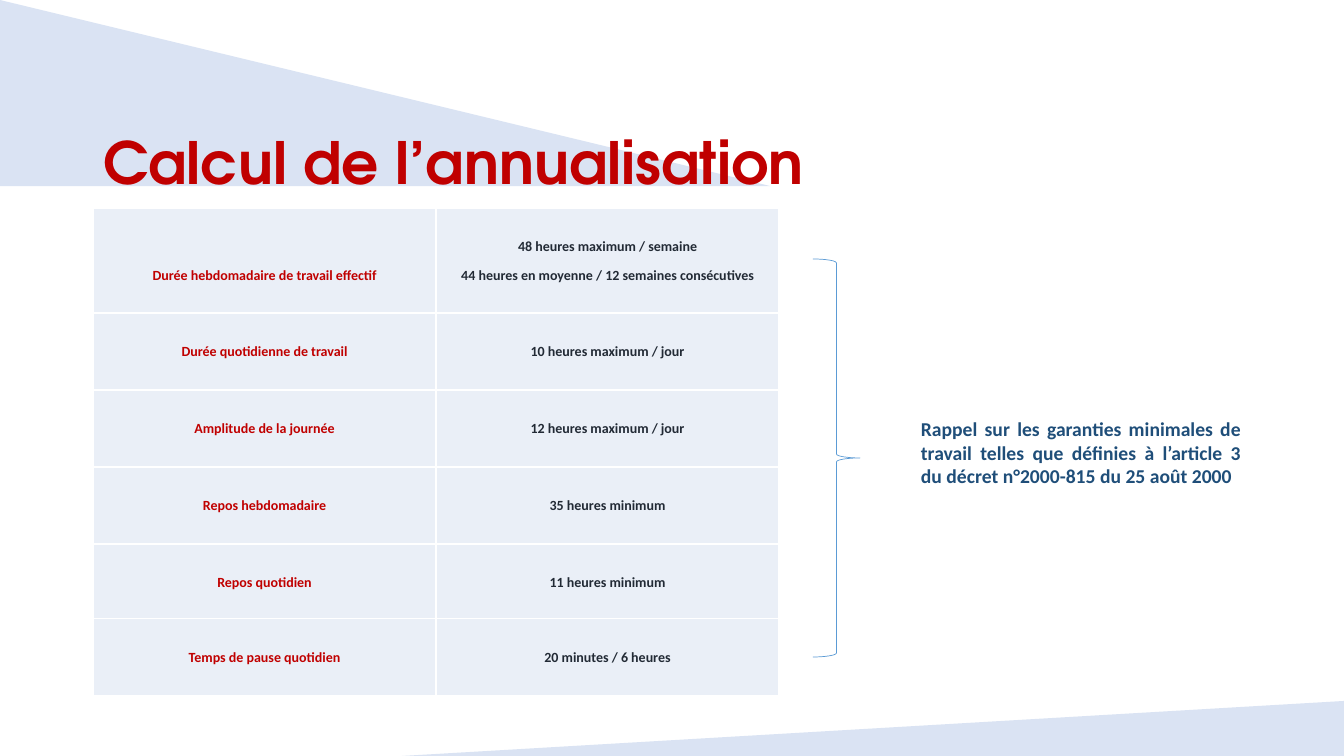
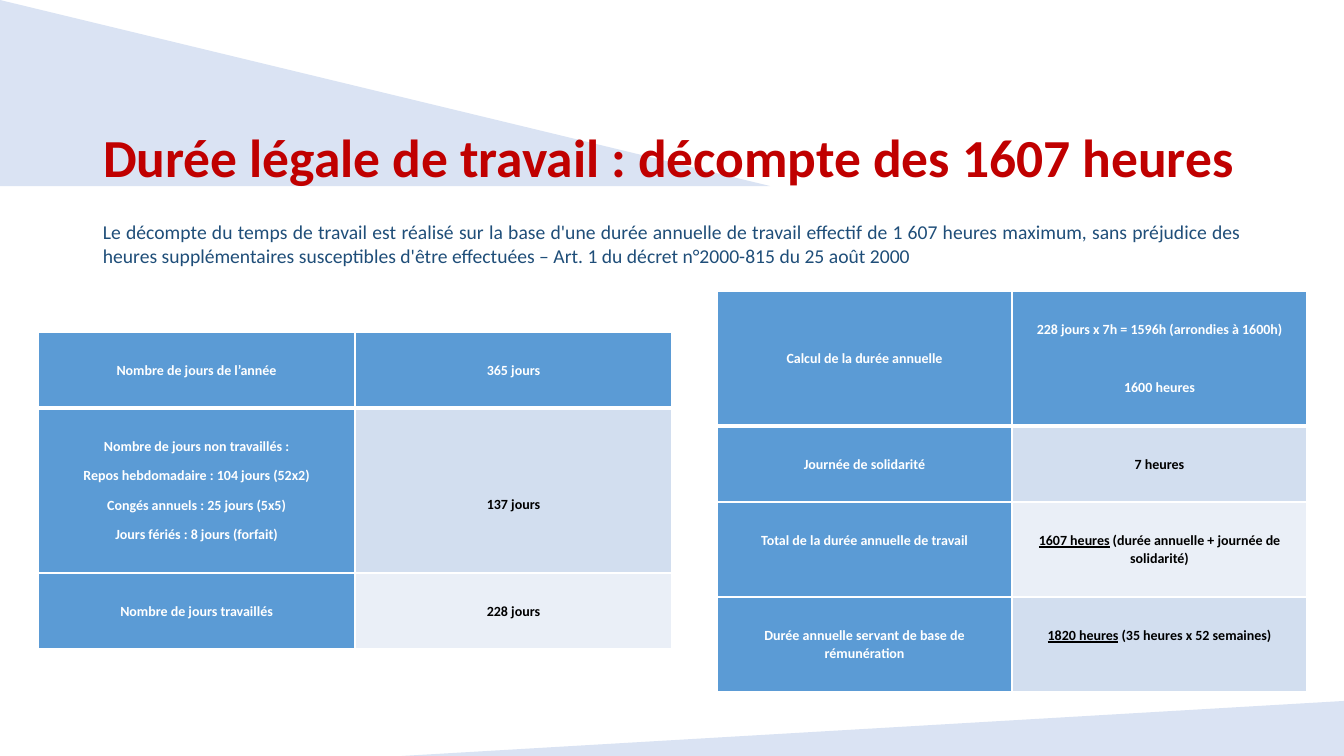
"""Build two slides on the annual working time rules."""
import pptx
import pptx.dml.color
import pptx.enum.shapes
import pptx.enum.text
import pptx.oxml
import pptx.oxml.ns
import pptx.util
from lxml import etree

RGB = pptx.dml.color.RGBColor
Pt = pptx.util.Pt
SHAPE = pptx.enum.shapes.MSO_SHAPE
ALIGN = pptx.enum.text.PP_ALIGN
ANCHOR = pptx.enum.text.MSO_ANCHOR
qn = pptx.oxml.ns.qn

RED = RGB(0xC0, 0x00, 0x00)
NAVY = RGB(0x1F, 0x4E, 0x79)
DARK = RGB(0x22, 0x2A, 0x35)
BLACK = RGB(0x00, 0x00, 0x00)
WHITE = RGB(0xFF, 0xFF, 0xFF)
BAND = RGB(0xDA, 0xE3, 0xF3)
BLUE = RGB(0x5B, 0x9B, 0xD5)
MID = RGB(0xD2, 0xDE, 0xEF)
PALE = RGB(0xEA, 0xEF, 0xF7)

FONT = "Calibri"
TITLE_FONT = "TeX Gyre Adventor"
LINE = 29

BANDS = [((0, 0, 770, 186), False), ((402, 701, 942, 55), True)]

GUARANTEES = [
    ([(2, "Durée hebdomadaire de travail effectif")],
     [(1, "48 heures maximum / semaine"), (0, "44 heures en moyenne / 12 semaines consécutives")]),
    ([(1, "Durée quotidienne de travail")], [(1, "10 heures maximum / jour")]),
    ([(1, "Amplitude de la journée")], [(1, "12 heures maximum / jour")]),
    ([(1, "Repos hebdomadaire")], [(1, "35 heures minimum")]),
    ([(1, "Repos quotidien")], [(1, "11 heures minimum")]),
    ([(1, "Temps de pause quotidien")], [(1, "20 minutes / 6 heures")]),
]
DAYS = [
    ([(1, "Nombre de jours de l’année")], [(1, "365 jours")]),
    ([(1, "Nombre de jours non travaillés :"), (0, "Repos hebdomadaire : 104 jours (52x2)"),
      (0, "Congés annuels : 25 jours (5x5)"), (0, "Jours fériés : 8 jours (forfait)")],
     [(3, "137 jours")]),
    ([(1, "Nombre de jours travaillés")], [(1, "228 jours")]),
]
HOURS = [
    ([(2, "Calcul de la durée annuelle")],
     [(1, "228 jours x 7h = 1596h (arrondies à 1600h)"), (1, "1600 heures")]),
    ([(1, "Journée de solidarité")], [(1, "7 heures")]),
    ([(1, "Total de la durée annuelle de travail")],
     [(1, "1607 heures", " (durée annuelle + journée de solidarité)")]),
    ([(1, "Durée annuelle servant de base de rémunération")],
     [(1, "1820 heures", " (35 heures x 52 semaines)")]),
]
REMINDER = ("Rappel sur les garanties minimales de travail telles que définies "
            "à l’article 3 du décret n°2000-815 du 25 août 2000")
INTRO = ("Le décompte du temps de travail est réalisé sur la base d'une durée annuelle de travail "
         "effectif de 1 607 heures maximum, sans préjudice des heures supplémentaires susceptibles "
         "d'être effectuées – Art. 1 du décret n°2000-815 du 25 août 2000")


def px(n):
    return pptx.util.Emu(round(n * 914400 / 100.8))


def box(*lengths):
    return [px(n) for n in lengths]


def add_run(p, text, size, color, bold=True, font=FONT):
    r = p.add_run()
    r.text = text
    r.font.name, r.font.size, r.font.bold = font, Pt(size), bold
    r.font.color.rgb = color
    return r


def add_bands(s, layout):
    for i, (place, flipped) in enumerate(BANDS):
        sp = s.shapes.add_shape(SHAPE.RIGHT_TRIANGLE, *box(*place))
        sp.shadow.inherit = False
        sp.fill.solid()
        sp.fill.fore_color.rgb = BAND
        sp.line.fill.background()
        el = sp._element
        if flipped:
            el.spPr.find(qn("a:xfrm")).set("flipH", "1")
        el.nvSpPr.cNvPr.set("id", str(100 + i))
        layout.shapes._spTree.insert(2 + i, el)


def set_title(s, text, size, spacing, bottom, font):
    sp = s.shapes.title
    sp.left, sp.top, sp.width, sp.height = box(93, 50, 1159, bottom - 50)
    tf = sp.text_frame
    tf.vertical_anchor = ANCHOR.BOTTOM
    tf.margin_bottom = 0
    tf.auto_size = pptx.enum.text.MSO_AUTO_SIZE.NONE
    p = tf.paragraphs[0]
    p.alignment, p.line_spacing = ALIGN.LEFT, spacing
    add_run(p, text, size, RED, font=font)


def add_note(s, place, text, bold):
    tf = s.shapes.add_textbox(*box(*place)).text_frame
    tf.word_wrap = True
    p = tf.paragraphs[0]
    p.alignment, p.space_after = ALIGN.JUSTIFY, Pt(8)
    add_run(p, text, 14, NAVY, bold)


def set_borders(cell, top, bottom):
    tcPr = cell._tc.get_or_add_tcPr()
    for i, (side, width) in enumerate((("L", 1), ("R", 1), ("T", top), ("B", bottom))):
        ln = etree.Element(qn("a:ln" + side), w=str(Pt(width)))
        fill = etree.SubElement(ln, qn("a:solidFill"))
        etree.SubElement(fill, qn("a:srgbClr"), val=str(WHITE))
        tcPr.insert(i, ln)


def fill_cell(cell, lines, fill, color):
    cell.fill.solid()
    cell.fill.fore_color.rgb = fill
    cell.margin_left = cell.margin_right = px(7)
    cell.margin_top, cell.margin_bottom = px(lines[0][0] * LINE), 0
    cell.vertical_anchor = ANCHOR.TOP
    tf = cell.text_frame
    for i, (skipped, *texts) in enumerate(lines):
        p = tf.add_paragraph() if i else tf.paragraphs[0]
        p.alignment, p.line_spacing, p.space_after = ALIGN.CENTER, 1.07, Pt(8)
        if i and skipped:
            p.space_before = px(skipped * LINE)
        for j, text in enumerate(texts):
            r = add_run(p, text, 10, color)
            if len(texts) > 1 and j == 0:
                r.font.underline = True


def add_grid(s, left, top, col_width, heights, rows, styles, header_rule=1):
    place = box(left, top, 2 * col_width, sum(heights))
    table = s.shapes.add_table(len(rows), 2, *place).table
    table.first_row = table.horz_banding = False
    for col in table.columns:
        col.width = px(col_width)
    for i, (row, height) in enumerate(zip(rows, heights)):
        table.rows[i].height = px(height)
        for j, lines in enumerate(row):
            cell = table.cell(i, j)
            fill_cell(cell, lines, *styles(i, j))
            set_borders(cell, header_rule if i == 1 else 1, header_rule if i == 0 else 1)


def plain_style(i, j):
    return PALE, (RED, DARK)[j]


def banded_style(i, j):
    if i == 0 or j == 0:
        return BLUE, WHITE
    return (MID if i % 2 else PALE), BLACK


def add_brace(s):
    sp = s.shapes.add_shape(SHAPE.RIGHT_BRACE, *box(813, 259, 47, 398))
    sp.shadow.inherit = False
    sp.fill.background()
    sp.line.color.rgb, sp.line.width = BLUE, Pt(0.5)


def main():
    prs = pptx.Presentation()
    prs.slide_width, prs.slide_height = box(1344, 756)
    layout = prs.slide_layouts[5]

    s = prs.slides.add_slide(layout)
    add_bands(s, layout)
    set_title(s, "Calcul de l’annualisation", 41.6, 0.7, 194, TITLE_FONT)
    add_note(s, (911, 412, 340, 82), REMINDER, True)
    add_grid(s, 93, 208, 343, [105, 77, 77, 77, 75, 77], GUARANTEES, plain_style)
    add_brace(s)

    s = prs.slides.add_slide(layout)
    set_title(s, "Durée légale de travail : décompte des 1607 heures", 38.2, 0.8, 188, FONT)
    add_note(s, (93, 215, 1159, 57), INTRO, False)
    add_grid(s, 717, 291, 295, [135, 76, 95, 95], HOURS, banded_style, 3)
    add_grid(s, 38, 332, 317, [76, 165, 76], DAYS, banded_style, 3)

    prs.save("out.pptx")


if __name__ == "__main__":
    main()
